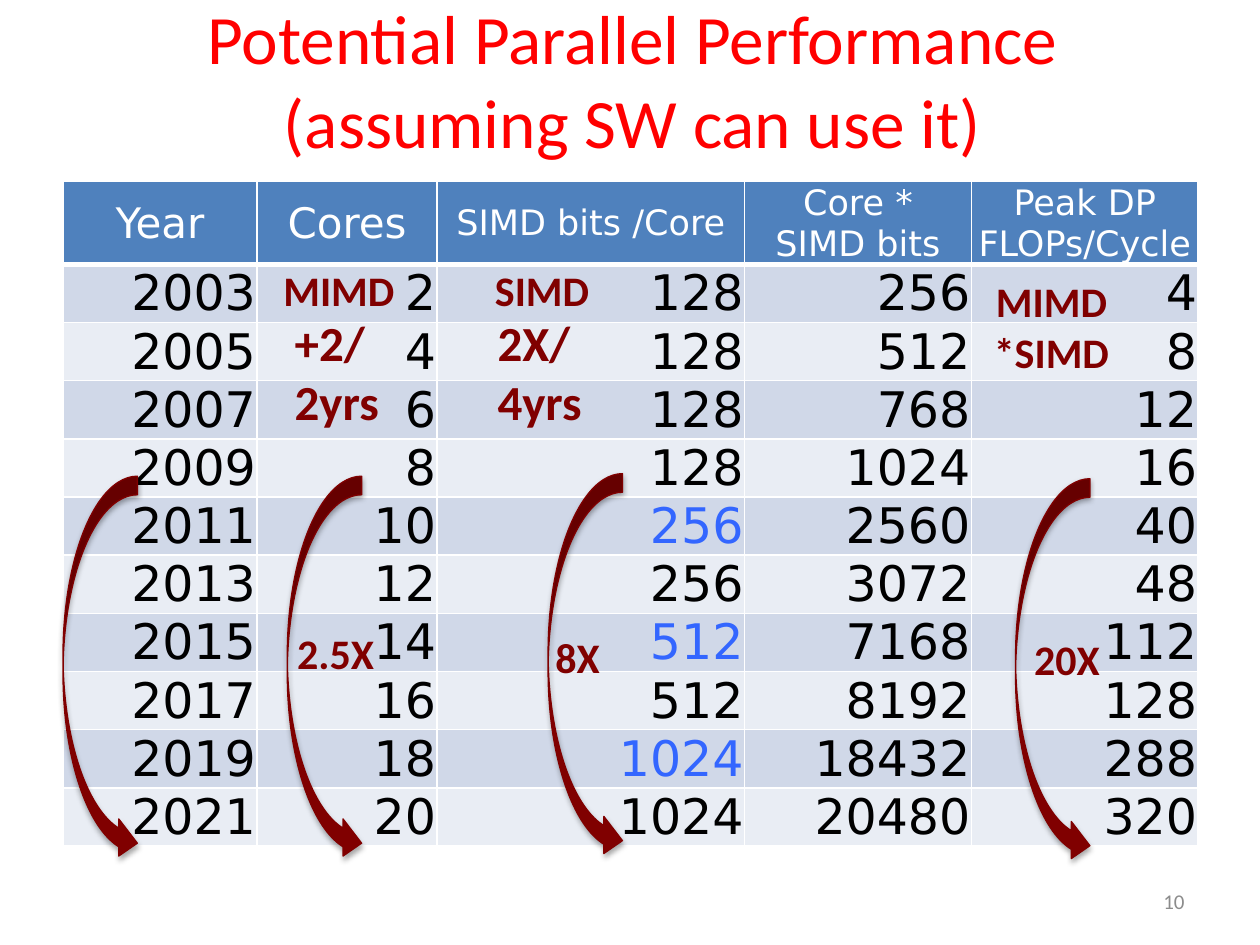
from lxml import etree
from pptx import Presentation
from pptx.dml.color import RGBColor
from pptx.enum.shapes import MSO_SHAPE as Shape
from pptx.enum.text import MSO_ANCHOR as Anchor, MSO_AUTO_SIZE as AutoSize, PP_ALIGN as Align
from pptx.oxml import parse_xml
from pptx.oxml.ns import nsdecls, qn
from pptx.util import Inches, Pt

MAROON = "800000"
BLUE = "3366FF"
HEADER_FILL = "4F81BD"
BAND_FILLS = ("D0D8E8", "E9EDF4")

COLUMN_WIDTHS = (1.54, 1.43, 2.44, 1.8, 1.8)
ROW_HEIGHT = 0.41
HEADERS = (("Year", 24), ("Cores", 24), ("SIMD bits /Core", 20),
           ("Core *\vSIMD bits", 20), ("Peak DP FLOPs/Cycle", 20))
ROWS = (
    (2003, 2, 128, 256, 4),
    (2005, 4, 128, 512, 8),
    (2007, 6, 128, 768, 12),
    (2009, 8, 128, 1024, 16),
    (2011, 10, 256, 2560, 40),
    (2013, 12, 256, 3072, 48),
    (2015, 14, 512, 7168, 112),
    (2017, 16, 512, 8192, 128),
    (2019, 18, 1024, 18432, 288),
    (2021, 20, 1024, 20480, 320),
)
SIMD_COLUMN = 2

# Arrow left and top, then the label with its box
GROWTH_ARROWS = (
    (2.28, 3.78, "2.5X", (2.26, 4.93, 0.82, 0.5)),
    (4.35, 3.76, "8X", (4.31, 4.96, 0.56, 0.5)),
    (8.06, 3.8, "20X", (8.11, 4.98, 0.73, 0.5)),
)
NOTES = (
    ("MIMD", (2.15, 2.05, 1.09, 0.5), 24, Align.LEFT),
    ("SIMD", (3.83, 2.05, 0.96, 0.5), 24, Align.LEFT),
    ("MIMD\v*SIMD", (7.78, 2.14, 1.13, 0.91), 24, Align.CENTER),
    ("+2/\n2yrs", (2.24, 2.43, 0.88, 1.04), 28, Align.LEFT),
    ("2X/\n4yrs", (3.85, 2.43, 0.88, 1.04), 28, Align.LEFT),
)


def color(hex_value):
    return RGBColor.from_string(hex_value)


def box(*lengths):
    return [Inches(length) for length in lengths]


def set_attributes(target, values):
    for name, value in values.items():
        setattr(target, name, value)


def write_text(frame, text, size, hex_color, align, font="Calibri", bold=False):
    frame.text = text
    font_values = {"name": font, "size": Pt(size), "bold": bold}
    for paragraph in frame.paragraphs:
        paragraph.alignment = align
        for run in paragraph.runs:
            set_attributes(run.font, font_values)
            run.font.color.rgb = color(hex_color)


def add_title(slide, text):
    title = slide.shapes.title
    title.left, title.top, title.width, title.height = box(0.52, 0, 9, 1.25)
    write_text(title.text_frame, text, 39.6, "FF0000", Align.CENTER)
    set_attributes(title.text_frame, {"vertical_anchor": Anchor.MIDDLE,
                                      "auto_size": AutoSize.NONE, "word_wrap": True})


def set_borders(cell, bottom_width):
    properties = cell._tc.get_or_add_tcPr()
    widths = {"lnL": 1, "lnR": 1, "lnT": 1, "lnB": bottom_width}
    for tag, width in widths.items():
        properties.append(parse_xml(
            f'<a:{tag} {nsdecls("a")} w="{Pt(width)}"><a:solidFill>'
            f'<a:srgbClr val="FFFFFF"/></a:solidFill></a:{tag}>'))


def format_cell(cell, text, size, hex_color, fill, align, anchor, bottom_width=1):
    write_text(cell.text_frame, text, size, hex_color, align, font="DejaVu Sans")
    set_attributes(cell, {"vertical_anchor": anchor, "margin_left": Inches(0.01),
                          "margin_right": Inches(0.01), "margin_top": Inches(0.01),
                          "margin_bottom": 0})
    set_borders(cell, bottom_width)
    cell.fill.solid()
    cell.fill.fore_color.rgb = color(fill)


def add_performance_table(slide):
    row_count = len(ROWS) + 1
    frame = slide.shapes.add_table(row_count, len(HEADERS),
                                   *box(0.5, 1.44, sum(COLUMN_WIDTHS), ROW_HEIGHT * row_count))
    table = frame.table
    for column, width in zip(table.columns, COLUMN_WIDTHS):
        column.width = Inches(width)
    for row in table.rows:
        row.height = Inches(ROW_HEIGHT)

    for column, (text, size) in enumerate(HEADERS):
        format_cell(table.cell(0, column), text, size, "FFFFFF", HEADER_FILL,
                    Align.CENTER, Anchor.MIDDLE, bottom_width=3)

    previous_bits = ROWS[0][SIMD_COLUMN]
    for index, values in enumerate(ROWS):
        doubled = values[SIMD_COLUMN] > previous_bits
        previous_bits = values[SIMD_COLUMN]
        for column, value in enumerate(values):
            text_color = BLUE if doubled and column == SIMD_COLUMN else "000000"
            format_cell(table.cell(index + 1, column), str(value), 28, text_color,
                        BAND_FILLS[index % 2], Align.RIGHT, Anchor.BOTTOM)


def add_label(shapes, text, position, size=24, align=Align.LEFT):
    label = shapes.add_textbox(*box(*position))
    write_text(label.text_frame, text, size, MAROON, align, bold=True)
    set_attributes(label.text_frame, {"word_wrap": False,
                                      "auto_size": AutoSize.SHAPE_TO_FIT_TEXT})


def add_drop_shadow(shape):
    shape.shadow.inherit = False
    effects = shape._element.spPr.find(qn("a:effectLst"))
    shadow = etree.SubElement(effects, qn("a:outerShdw"), blurRad=str(Pt(3.1)),
                              dist=str(Pt(1.8)), dir="5400000", rotWithShape="0")
    shade = etree.SubElement(shadow, qn("a:srgbClr"), val="000000")
    etree.SubElement(shade, qn("a:alpha"), val="35000")


def add_curved_arrow(shapes, left, top):
    arrow = shapes.add_shape(Shape.CURVED_RIGHT_ARROW, *box(left, top, 0.59, 3.06))
    arrow.fill.solid()
    arrow.fill.fore_color.rgb = color(MAROON)
    arrow.line.color.rgb = color(MAROON)
    arrow.line.width = Pt(0.75)
    add_drop_shadow(arrow)


def add_slide_number(slide, number):
    frame = slide.shapes.add_textbox(*box(7.17, 6.95, 2.33, 0.4)).text_frame
    write_text(frame, number, 12, "8C8C8C", Align.RIGHT)
    set_attributes(frame, {"word_wrap": True, "vertical_anchor": Anchor.MIDDLE})


def main():
    presentation = Presentation()
    presentation.slide_width, presentation.slide_height = box(10, 7.5)
    slide = presentation.slides.add_slide(presentation.slide_layouts[5])

    add_title(slide, "Potential Parallel Performance (assuming SW can use it)")
    add_performance_table(slide)
    add_slide_number(slide, "10")
    add_curved_arrow(slide.shapes, 0.5, 3.78)
    for left, top, factor, position in GROWTH_ARROWS:
        group = slide.shapes.add_group_shape()
        add_curved_arrow(group.shapes, left, top)
        add_label(group.shapes, factor, position)
    for text, position, size, align in NOTES:
        add_label(slide.shapes, text, position, size, align)

    presentation.save("out.pptx")


if __name__ == "__main__":
    main()
